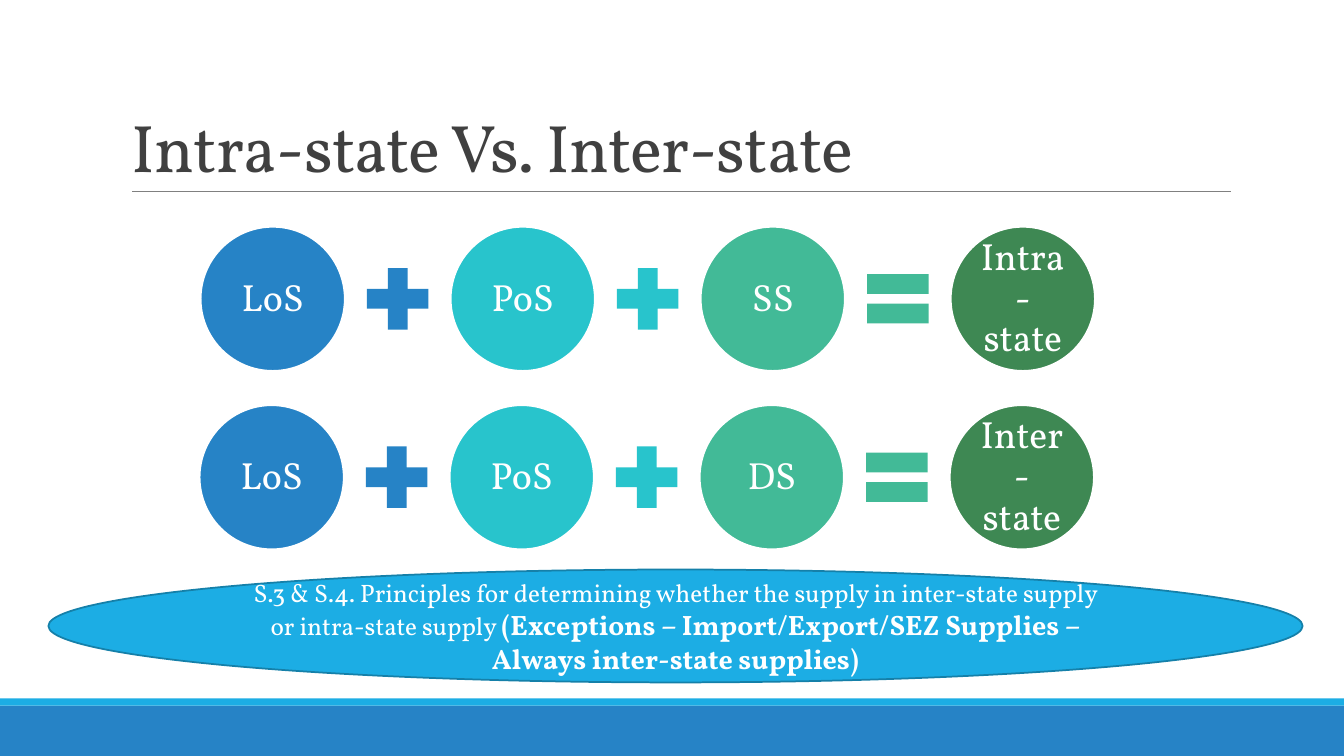
from dataclasses import dataclass

from pptx import Presentation
from pptx import util as u
from pptx.dml.color import RGBColor
from pptx.enum import shapes, text
from pptx.oxml import parse_xml
from pptx.oxml.ns import nsdecls

FONT = "Vollkorn"
COLOURS = {
    "blue": "2683C6",
    "sky": "1CADE4",
    "sky_edge": "1580A9",
    "teal": "28C4CC",
    "mint": "42BA97",
    "green": "3E8853",
    "rule": "808080",
    "title": "404040",
    "white": "FFFFFF",
}
TERM_COLOURS = ["blue", "teal", "mint", "green"]
OPERATORS = [shapes.MSO_SHAPE.MATH_PLUS, shapes.MSO_SHAPE.MATH_PLUS, shapes.MSO_SHAPE.MATH_EQUAL]
CIRCLE, SIGN, PITCH = 1.43, 0.83, 2.48
SIGN_LEFT, SIGN_TOP = 1.54, 0.3


@dataclass
class Equation:
    left: float
    top: float
    terms: list[str]


EQUATIONS = [
    Equation(1.99, 2.25, ["LoS", "PoS", "SS", "Intra-state"]),
    Equation(1.98, 4.02, ["LoS", "PoS", "DS", "Inter-state"]),
]


def rgb(name: str) -> RGBColor:
    return RGBColor.from_string(COLOURS[name])


def add_filled(parent, kind, left: float, top: float, width: float, height: float,
               fill: str, line: str | None = None):
    shape = parent.add_shape(kind, u.Inches(left), u.Inches(top), u.Inches(width), u.Inches(height))
    shape.shadow.inherit = False
    shape.fill.solid()
    shape.fill.fore_color.rgb = rgb(fill)
    if line:
        shape.line.color.rgb = rgb(line)
        shape.line.width = u.Pt(1.25)
    else:
        shape.line.fill.background()
    return shape


def format_span(span, size: float, colour: str = "white", bold: bool = False) -> None:
    span.font.name = FONT
    span.font.size = u.Pt(size)
    span.font.bold = bold
    span.font.color.rgb = rgb(colour)


def add_term(parent, left: float, top: float, label: str, fill: str) -> None:
    circle = add_filled(parent, shapes.MSO_SHAPE.OVAL, left, top, CIRCLE, CIRCLE, fill, "white")
    box = circle.text_frame
    box.margin_left = box.margin_right = box.margin_top = box.margin_bottom = u.Inches(0.04)
    box.vertical_anchor = text.MSO_ANCHOR.MIDDLE
    box.word_wrap = True
    box.text = label
    para = box.paragraphs[0]
    para.alignment = text.PP_ALIGN.CENTER
    para.line_spacing = 0.9
    format_span(para.runs[0], 27)


def add_equation(page, equation: Equation) -> None:
    group = page.shapes.add_group_shape().shapes
    for index, (label, colour) in enumerate(zip(equation.terms, TERM_COLOURS)):
        left = equation.left + index * PITCH
        add_term(group, left, equation.top, label, colour)
        if index < len(OPERATORS):
            add_filled(group, OPERATORS[index], left + SIGN_LEFT, equation.top + SIGN_TOP,
                       SIGN, SIGN, colour)


def add_title(page) -> None:
    title = page.shapes.title
    title.left, title.top = u.Inches(1.2), u.Inches(0.31)
    title.width, title.height = u.Inches(11), u.Inches(1.59)
    box = title.text_frame
    box.text = "Intra-state Vs. Inter-state"
    box.vertical_anchor = text.MSO_ANCHOR.BOTTOM
    box.word_wrap = True
    box.auto_size = text.MSO_AUTO_SIZE.NONE
    para = box.paragraphs[0]
    para.alignment = text.PP_ALIGN.LEFT
    para.line_spacing = 0.85
    format_span(para.runs[0], 48, "title")
    para.runs[0].font._element.set("spc", "-50")


def add_rule(page) -> None:
    rule = page.shapes.add_connector(shapes.MSO_CONNECTOR.STRAIGHT, u.Inches(1.31), u.Inches(1.9),
                                     u.Inches(12.21), u.Inches(1.9))
    rule.line.color.rgb = rgb("rule")
    rule.line.width = u.Pt(0.5)
    rule._element.spPr.append(parse_xml(f"<a:effectLst {nsdecls('a')}/>"))


def add_principles(page) -> None:
    oval = add_filled(page.shapes, shapes.MSO_SHAPE.OVAL, 0.48, 5.65, 12.44, 1.12, "sky", "sky_edge")
    box = oval.text_frame
    box.word_wrap = True
    box.vertical_anchor = text.MSO_ANCHOR.MIDDLE
    para = box.paragraphs[0]
    para.alignment = text.PP_ALIGN.CENTER
    for words, size, bold in [
        ("S.3 & S.4. Principles for determining whether the supply in inter-state supply "
         "or intra-state supply ", 18, False),
        ("(Exceptions – Import/Export/SEZ Supplies – Always inter-state supplies)", 20, True),
    ]:
        span = para.add_run()
        span.text = words
        format_span(span, size, bold=bold)


def main() -> None:
    deck = Presentation()
    deck.slide_width, deck.slide_height = u.Inches(13.33), u.Inches(7.5)
    page = deck.slides.add_slide(deck.slide_layouts[5])
    add_filled(page.shapes, shapes.MSO_SHAPE.RECTANGLE, 0, 7, 13.33, 0.5, "blue")
    add_filled(page.shapes, shapes.MSO_SHAPE.RECTANGLE, 0, 6.93, 13.33, 0.07, "sky")
    add_rule(page)
    add_title(page)
    for equation in EQUATIONS:
        add_equation(page, equation)
    add_principles(page)
    deck.save("out.pptx")


if __name__ == "__main__":
    main()
